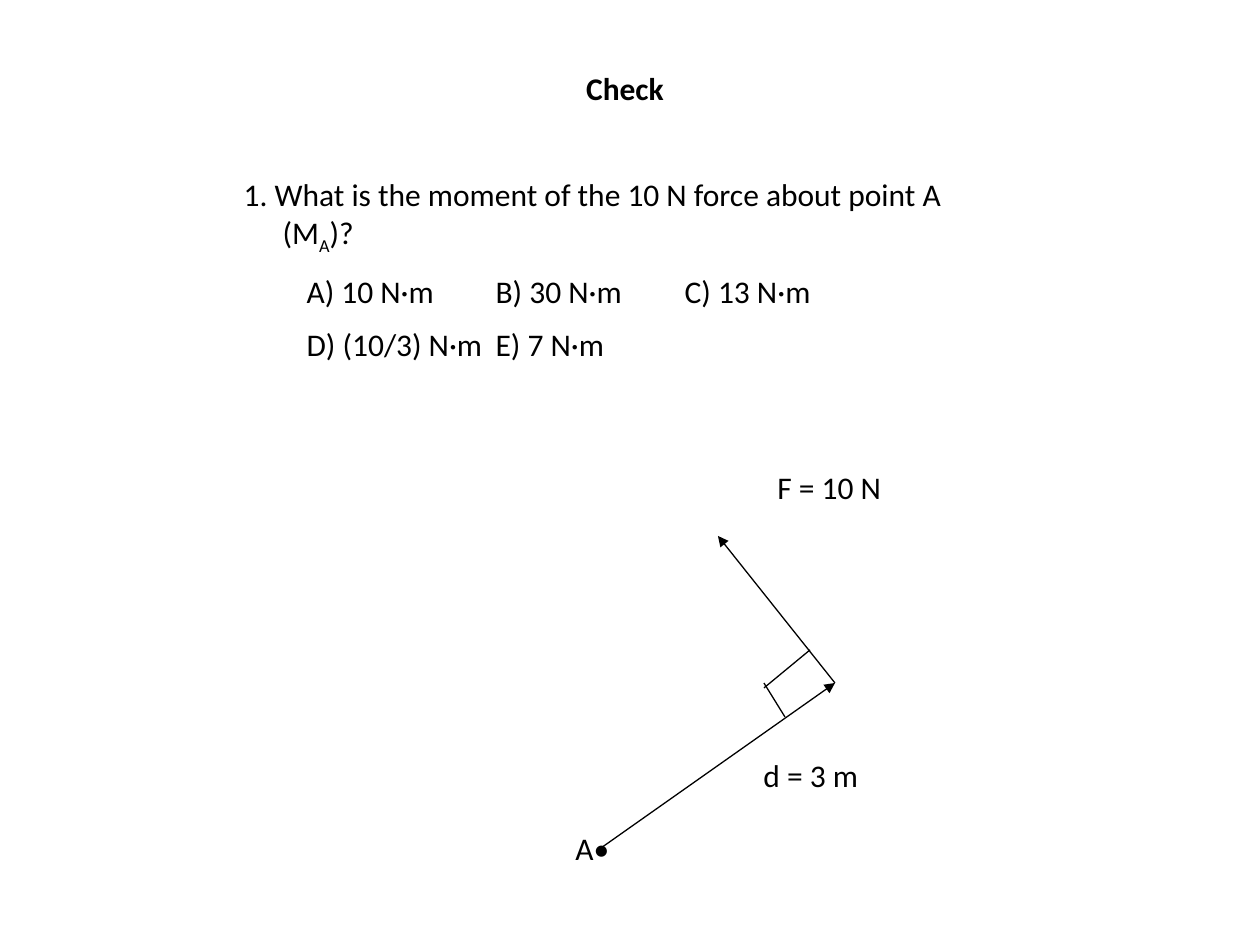
"""Build a slide asking for the moment of a force about a point."""
from typing import NamedTuple

from lxml import etree
from pptx import Presentation
from pptx.dml.color import RGBColor
from pptx.enum.shapes import MSO_CONNECTOR
from pptx.enum.text import MSO_ANCHOR, MSO_AUTO_SIZE, PP_ALIGN
from pptx.oxml.ns import qn
from pptx.util import Pt

PX = 914400 // 126
BLACK = RGBColor(0, 0, 0)
FONT = "Calibri"
SIZE = Pt(18)
STRAIGHT = MSO_CONNECTOR.STRAIGHT
TOP = MSO_ANCHOR.TOP
FIXED = MSO_AUTO_SIZE.NONE
CENTER = PP_ALIGN.CENTER


class Box(NamedTuple):
    left: int
    top: int
    width: int
    height: int


class Label(NamedTuple):
    text: str
    box: Box


class Line(NamedTuple):
    start: tuple[int, int]
    end: tuple[int, int]
    arrow: bool = False


class Row(NamedTuple):
    runs: tuple[str, ...]
    hang: int = 0
    tabs: tuple[int, ...] = ()


TITLE = Box(53, 63, 1144, 50)
BODY = Box(231, 169, 787, 204)
ROWS = (
    Row(("1. What is the moment of the 10 N force about point A (M", "A", ")?"), hang=39),
    Row(("\tA) 10 N·m", "\tB) 30 N·m", "\tC) 13 N·m"), tabs=(28, 291, 543)),
    Row(("\tD) (10/3) N·m", "\tE) 7 N·m"), tabs=(28, 417)),
)
TIP = (835, 683)
LINES = (
    Line((601, 848), TIP, arrow=True),
    Line(TIP, (718, 536), arrow=True),
    Line((810, 650), (764, 688)),
    Line((764, 683), (785, 717)),
)
LABELS = (
    Label("A•", Box(563, 823, 73, 50)),
    Label("d = 3 m", Box(751, 750, 247, 98)),
    Label("F = 10 N", Box(765, 462, 281, 98)),
)


def place(shape, box: Box) -> None:
    """Move a shape to a box."""
    shape.left, shape.top, shape.width, shape.height = (n * PX for n in box)


def add_run(para, text: str, bold: bool = False):
    """Add one run in the slide's type style."""
    run = para.add_run()
    run.text = text
    font = run.font
    font.name, font.size, font.bold = FONT, SIZE, bold
    font.color.rgb = BLACK
    return run


def set_frame(frame, wrap: bool) -> None:
    """Fix the size, anchor and wrap of a text frame."""
    frame.auto_size = FIXED
    frame.vertical_anchor = TOP
    frame.word_wrap = wrap


def add_row(para, row: Row) -> None:
    """Fill a paragraph with a row and set its indent and tabs."""
    para.space_before = Pt(9)
    props = para._p.get_or_add_pPr()
    props.set("marL", str(row.hang * PX))
    props.set("indent", str(-row.hang * PX))
    etree.SubElement(props, qn("a:buNone"))
    if row.tabs:
        stops = etree.SubElement(props, qn("a:tabLst"))
        for pos in row.tabs:
            etree.SubElement(stops, qn("a:tab"), pos=str(pos * PX), algn="l")
    for text in row.runs:
        run = add_run(para, text)
        if text == "A":
            run.font._element.set("baseline", "-25000")


def add_line(slide, line: Line) -> None:
    """Draw a thin line, with an arrowhead if asked."""
    ends = (n * PX for n in line.start + line.end)
    shape = slide.shapes.add_connector(STRAIGHT, *ends)
    shape.line.color.rgb = BLACK
    shape.line.width = Pt(0.75)
    if line.arrow:
        etree.SubElement(shape.line._get_or_add_ln(), qn("a:tailEnd"), type="triangle")
    etree.SubElement(shape._element.spPr, qn("a:effectLst"))


def add_label(slide, label: Label) -> None:
    """Add a text label on one line."""
    shape = slide.shapes.add_textbox(*(n * PX for n in label.box))
    set_frame(shape.text_frame, wrap=False)
    add_run(shape.text_frame.paragraphs[0], label.text)


def main() -> None:
    """Build and save the slide."""
    deck = Presentation()
    deck.slide_width, deck.slide_height = 1260 * PX, 945 * PX
    slide = deck.slides.add_slide(deck.slide_layouts[1])

    title = slide.shapes.title
    place(title, TITLE)
    set_frame(title.text_frame, wrap=True)
    head = title.text_frame.paragraphs[0]
    head.alignment = CENTER
    add_run(head, "Check", bold=True)

    body = slide.placeholders[1]
    place(body, BODY)
    frame = body.text_frame
    set_frame(frame, wrap=True)
    for i, row in enumerate(ROWS):
        add_row(frame.add_paragraph() if i else frame.paragraphs[0], row)

    for line in LINES:
        add_line(slide, line)
    for label in LABELS:
        add_label(slide, label)
    deck.save("out.pptx")


if __name__ == "__main__":
    main()
